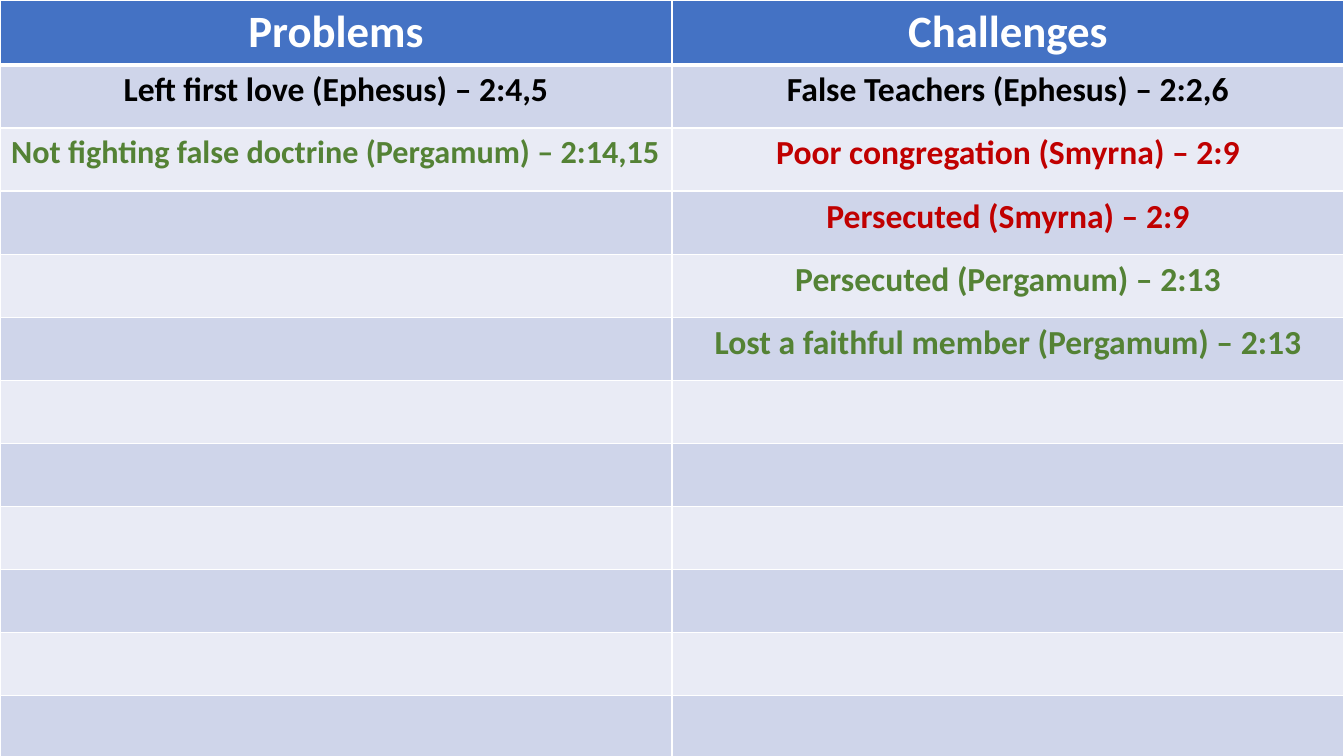
from lxml import etree
from pptx import Presentation
from pptx.dml.color import RGBColor
from pptx.enum import text
from pptx.oxml import ns
from pptx.util import Cm, Pt

WHITE = RGBColor(0xFF, 0xFF, 0xFF)
BLACK = RGBColor(0, 0, 0)
RED = RGBColor(0xC0, 0, 0)
GREEN = RGBColor(0x54, 0x82, 0x35)
HEADER_BLUE = RGBColor(0x44, 0x72, 0xC4)
BANDS = [RGBColor(0xE9, 0xEB, 0xF5), RGBColor(0xCF, 0xD5, 0xEA)]

# Each column lists (wording, size, colour) from the header down.
COLUMNS = [
    [
        ("Problems", 32, WHITE),
        ("Left first love (Ephesus) – 2:4,5", 24, BLACK),
        ("Not fighting false doctrine (Pergamum) – 2:14,15", 23, GREEN),
    ],
    [
        ("Challenges", 32, WHITE),
        ("False Teachers (Ephesus) – 2:2,6", 24, BLACK),
        ("Poor congregation (Smyrna) – 2:9", 24, RED),
        ("Persecuted (Smyrna) – 2:9", 24, RED),
        ("Persecuted (Pergamum) – 2:13", 24, GREEN),
        ("Lost a faithful member (Pergamum) – 2:13", 24, GREEN),
    ],
]
ROW_COUNT = 12
ROW_HEIGHT = Cm(1.59)
SLIDE_WIDTH, SLIDE_HEIGHT = Cm(33.87), Cm(19.05)


def set_borders(cell, widths):
    """Draw white cell borders; widths maps L, R, T, B to points, in that order."""
    tcPr = cell._tc.get_or_add_tcPr()
    for i, (side, width) in enumerate(widths.items()):
        ln = etree.Element(ns.qn(f"a:ln{side}"), w=str(Pt(width)))
        fill = etree.SubElement(ln, ns.qn("a:solidFill"))
        etree.SubElement(fill, ns.qn("a:srgbClr"), val=str(WHITE))
        tcPr.insert(i, ln)


def write_cell(cell, wording, size, color):
    cell.text_frame.text = wording
    p = cell.text_frame.paragraphs[0]
    p.alignment = text.PP_ALIGN.CENTER
    font = p.runs[0].font
    font.name, font.size, font.bold = "Calibri", Pt(size), True
    font.color.rgb = color


prs = Presentation()
prs.slide_width, prs.slide_height = SLIDE_WIDTH, SLIDE_HEIGHT
s = prs.slides.add_slide(prs.slide_layouts[6])
table = s.shapes.add_table(
    ROW_COUNT, len(COLUMNS), 0, 0, SLIDE_WIDTH, ROW_HEIGHT * ROW_COUNT
).table

for row in range(ROW_COUNT):
    table.rows[row].height = ROW_HEIGHT
    for col, entries in enumerate(COLUMNS):
        cell = table.cell(row, col)
        cell.fill.solid()
        cell.fill.fore_color.rgb = BANDS[row % 2] if row else HEADER_BLUE
        set_borders(cell, {"L": 1, "R": 1, "T": 3 if row == 1 else 1, "B": 1 if row else 3})
        if row < len(entries):
            write_cell(cell, *entries[row])

prs.save("out.pptx")
